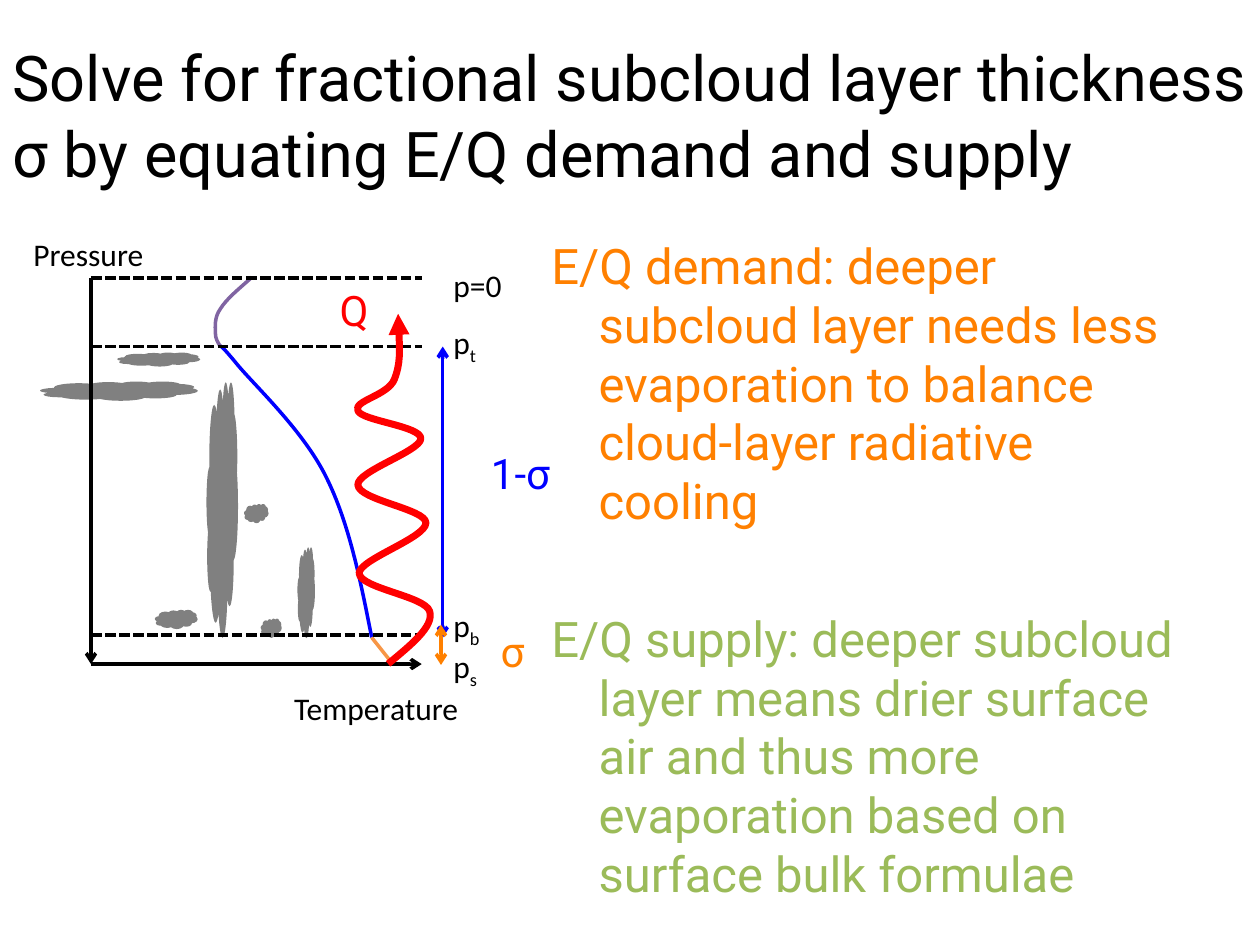
"""Build the slide on subcloud layer thickness from E/Q demand and supply."""
from lxml import etree
from pptx import Presentation
from pptx.dml.color import RGBColor
from pptx.enum import dml, shapes, text
from pptx.oxml import ns
from pptx.util import Pt

BLACK = RGBColor(0, 0, 0)
GRAY = RGBColor(0x80, 0x80, 0x80)
RED = RGBColor(0xFF, 0, 0)
BLUE = RGBColor(0, 0, 0xFF)
PURPLE = RGBColor(0x80, 0x64, 0xA2)
ORANGE = RGBColor(0xFF, 0x80, 0)
PALE_ORANGE = RGBColor(0xF7, 0x96, 0x46)
GREEN = RGBColor(0x9B, 0xBB, 0x59)

AXIS_X, AXIS_END = 52, 241
TOP_Y, CLOUD_TOP_Y, CLOUD_BASE_Y, SURFACE_Y = 159, 198, 363, 379.5

CLOUDS = [
    (88.5, 348.5, 24.5, 11), (118, 218, 18, 146), (170, 312.5, 10, 52),
    (67, 201.5, 47.5, 8), (149, 353.5, 12, 11), (139.5, 288, 14, 11),
    (23, 218, 90, 11),
]
CLOUD_LAYER_CURVE = [
    (212.4, 364.3), (205.9, 331.2), (199.4, 298.8), (186.5, 272.9),
    (173.5, 246.2), (145.4, 220.3), (135.4, 208.1),
    (125.3, 195.8), (126, 198), (126, 198),
]
UPPER_CURVE = [
    (126, 198), (124.6, 195.8), (123.1, 193.7), (123.1, 190.1),
    (123.1, 186.5), (122.4, 181.4), (126, 176.4),
    (129.6, 170.6), (136.8, 164.9), (144, 158.4),
]
RADIATION_CURVE = [
    (221.8, 379.4), (234.7, 368.6), (248.4, 357.8), (245.5, 349.2),
    (242.6, 340.6), (205.9, 336.2), (205.2, 327.6),
    (205.2, 319.7), (243.4, 307.4), (243.4, 298.8),
    (243.4, 290.9), (205.2, 285.8), (204.5, 277.2),
    (203.8, 269.3), (240.5, 257.8), (240.5, 250.6),
    (240.5, 243.4), (206.6, 240.5), (204.5, 234.7),
    (201.6, 229), (221.8, 226.1), (225.4, 216.7),
    (229, 207.4), (228.2, 193), (227.5, 179.3),
]
LABELS = [
    ("Pressure", "", (12, 131, 78.5, 29), 18, BLACK),
    ("Temperature", "", (161, 390, 112, 29), 18, BLACK),
    ("p=0", "", (252, 148.5, 44, 29), 18, BLACK),
    ("p", "t", (252, 181, 44, 29), 18, BLACK),
    ("p", "b", (252, 343, 44, 29), 18, BLACK),
    ("p", "s", (252, 366, 44, 29), 18, BLACK),
    ("Q", "", (187, 159, 34, 36), 24, RED),
    ("σ", "", (279, 354, 34, 36), 24, ORANGE),
    ("1-σ", "", (273.5, 252, 66, 36), 24, BLUE),
]
POINTS = [
    ("E/Q demand: deeper subcloud layer needs less evaporation "
     "to balance cloud-layer radiative cooling", ORANGE, 0),
    ("E/Q supply: deeper subcloud layer means drier surface air and thus "
     "more evaporation based on surface bulk formulae", GREEN, 45),
]


def add_span(para, words, size, color, face):
    """Add a formatted run to a paragraph and return it."""
    span = para.add_run()
    span.text = words
    for name, value in {"size": Pt(size), "name": face}.items():
        setattr(span.font, name, value)
    span.font.color.rgb = color
    return span


def add_title(page, words):
    """Place and fill the title placeholder."""
    title = page.shapes.title
    places = {"left": 0, "top": 0, "width": 720, "height": 131}
    for name, value in places.items():
        setattr(title, name, Pt(value))
    title.text_frame.vertical_anchor = text.MSO_ANCHOR.MIDDLE
    para = title.text_frame.paragraphs[0]
    para.alignment = text.PP_ALIGN.LEFT
    add_span(para, words, 36, BLACK, "Roboto")


def add_box(page, place):
    """Add a wrapping text box and return its text frame."""
    frame = page.shapes.add_textbox(*map(Pt, place)).text_frame
    frame.word_wrap = True
    return frame


def add_label(page, words, subscript, place, size, color):
    """Add a diagram label with an optional subscript."""
    para = add_box(page, place).paragraphs[0]
    face = "Calibri" if size == 18 else "Roboto"
    add_span(para, words, size, color, face)
    if subscript:
        span = add_span(para, subscript, size, color, face)
        span._r.get_or_add_rPr().set("baseline", "-25000")


def add_points(page, points):
    """Add the explanatory paragraphs with hanging indents."""
    frame = add_box(page, (308, 131, 376, 393))
    for index, (words, color, gap) in enumerate(points):
        para = frame.add_paragraph() if index else frame.paragraphs[0]
        para.space_before = Pt(gap)
        properties = para._p.get_or_add_pPr()
        for name, value in {"marL": Pt(27), "indent": -Pt(27)}.items():
            properties.set(name, str(value))
        add_span(para, words, 28, color, "Roboto")


def style_line(shape, color, width, dash=None, **ends):
    """Set colour, width, dash and arrowheads of an outline."""
    shape.line.color.rgb = color
    for name, value in {"width": Pt(width), "dash_style": dash}.items():
        setattr(shape.line, name, value)
    outline = shape.line._get_or_add_ln()
    for tag in ("headEnd", "tailEnd"):
        if tag in ends:
            etree.SubElement(outline, ns.qn(f"a:{tag}"), type=ends[tag])


def add_line(page, start, end, color, **style):
    """Add a straight line without a shadow."""
    line = page.shapes.add_connector(
        shapes.MSO_CONNECTOR.STRAIGHT, *map(Pt, (*start, *end)))
    style_line(line, color, 2, **style)
    etree.SubElement(line._element.spPr, ns.qn("a:effectLst"))


def add_cloud(page, place):
    """Add a gray cloud."""
    cloud = page.shapes.add_shape(shapes.MSO_SHAPE.CLOUD, *map(Pt, place))
    cloud.shadow.inherit = False
    cloud.fill.solid()
    cloud.fill.fore_color.rgb = GRAY
    cloud.line.fill.background()


def add_curve(page, points, color, width, **ends):
    """Add an open curve, each three points after the first a Bézier piece."""
    start, *rest = [(Pt(x), Pt(y)) for x, y in points]
    builder = page.shapes.build_freeform(*start)
    builder.add_line_segments(rest, close=False)
    curve = builder.convert_to_shape()
    curve.shadow.inherit = False
    curve.fill.background()
    style_line(curve, color, width, **ends)
    outline = next(curve._element.iter(ns.qn("a:path")))
    steps = outline.findall(ns.qn("a:lnTo"))
    for first in range(0, len(steps), 3):
        piece = etree.SubElement(outline, ns.qn("a:cubicBezTo"))
        for step in steps[first:first + 3]:
            piece.append(step[0])
            outline.remove(step)


def add_diagram(page):
    """Draw the pressure and temperature profile."""
    for place in CLOUDS:
        add_cloud(page, place)
    add_curve(page, CLOUD_LAYER_CURVE, BLUE, 2)
    add_curve(page, UPPER_CURVE, PURPLE, 2)
    add_line(page, CLOUD_LAYER_CURVE[0], (224.5, SURFACE_Y), PALE_ORANGE)
    origin = (AXIS_X, SURFACE_Y)
    add_line(page, origin, (AXIS_END, SURFACE_Y), BLACK, tailEnd="arrow")
    add_line(page, (AXIS_X, TOP_Y), origin, BLACK, tailEnd="arrow")
    for y in (TOP_Y, CLOUD_TOP_Y, CLOUD_BASE_Y):
        add_line(page, (AXIS_X, y), (AXIS_END, y), BLACK,
                 dash=dml.MSO_LINE.SQUARE_DOT)
    add_curve(page, RADIATION_CURVE, RED, 4, tailEnd="triangle")
    for x, top, bottom, color in ((253, CLOUD_TOP_Y, 364.5, BLUE),
                                  (252, 357, 380, ORANGE)):
        add_line(page, (x, top), (x, bottom), color,
                 headEnd="arrow", tailEnd="arrow")


def main():
    """Build and save the deck."""
    deck = Presentation()
    deck.slide_width, deck.slide_height = Pt(720), Pt(540)
    page = deck.slides.add_slide(deck.slide_layouts[5])
    add_title(page, "Solve for fractional subcloud layer thickness σ "
                    "by equating E/Q demand and supply")
    add_diagram(page)
    for label in LABELS:
        add_label(page, *label)
    add_points(page, POINTS)
    deck.save("out.pptx")


if __name__ == "__main__":
    main()
